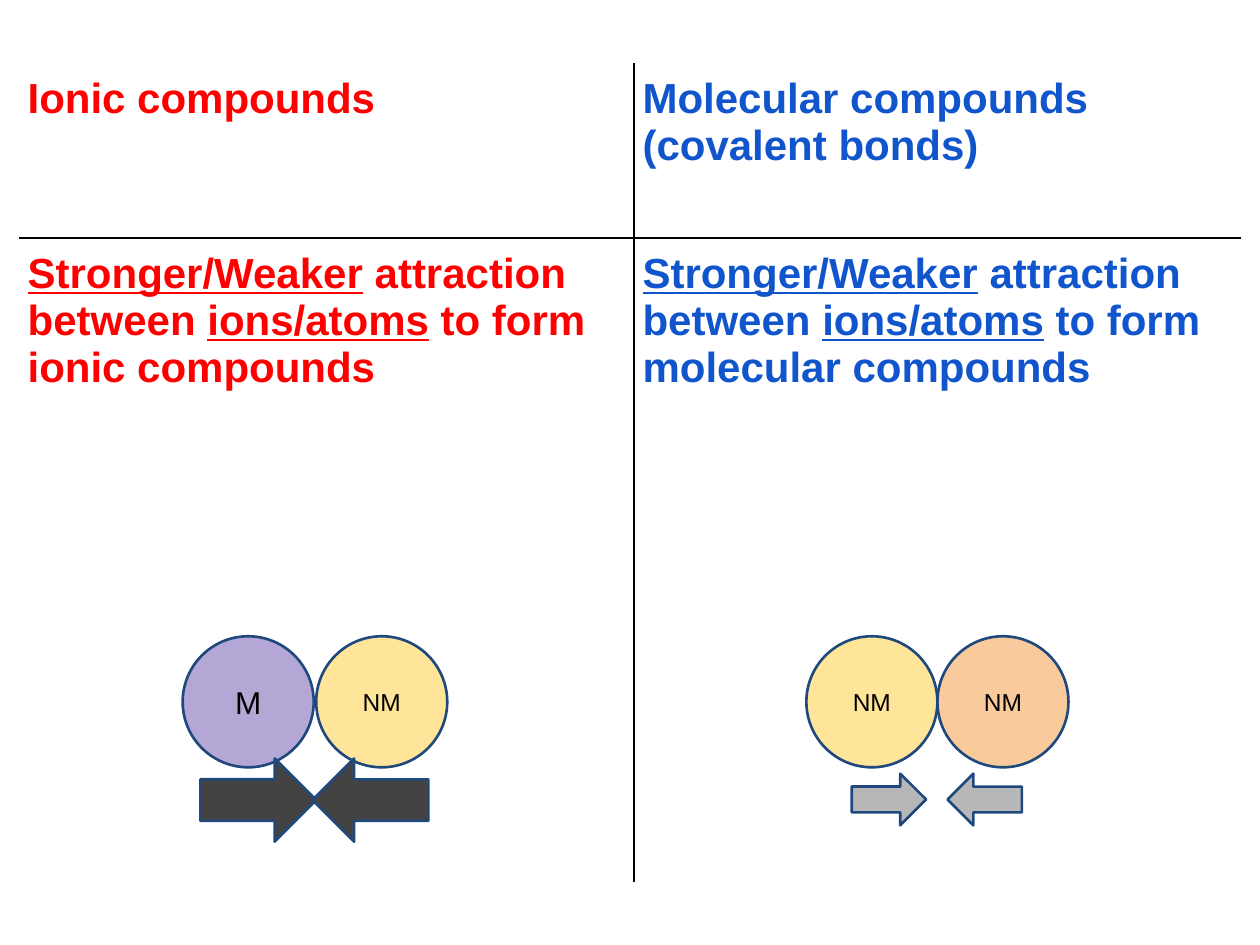
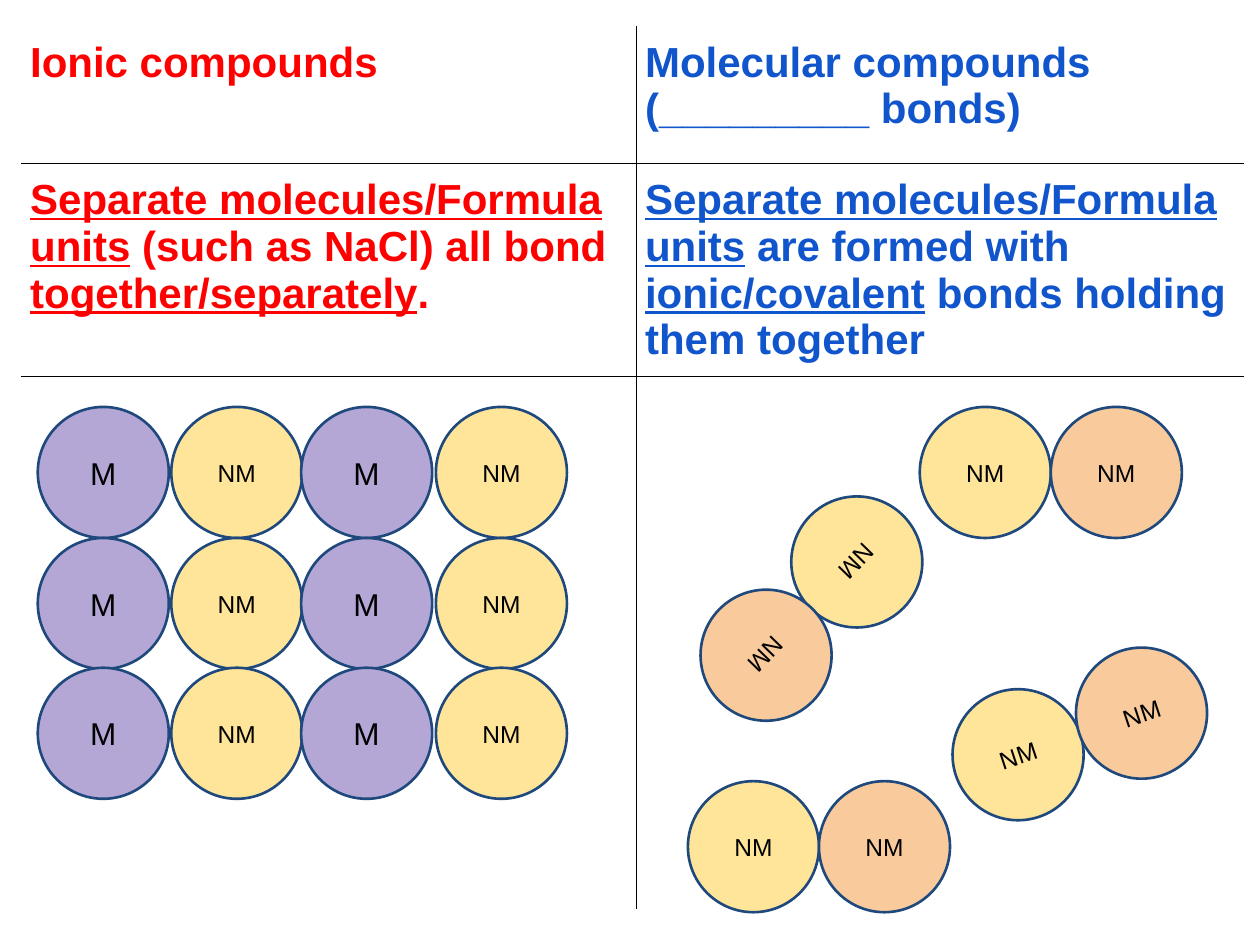
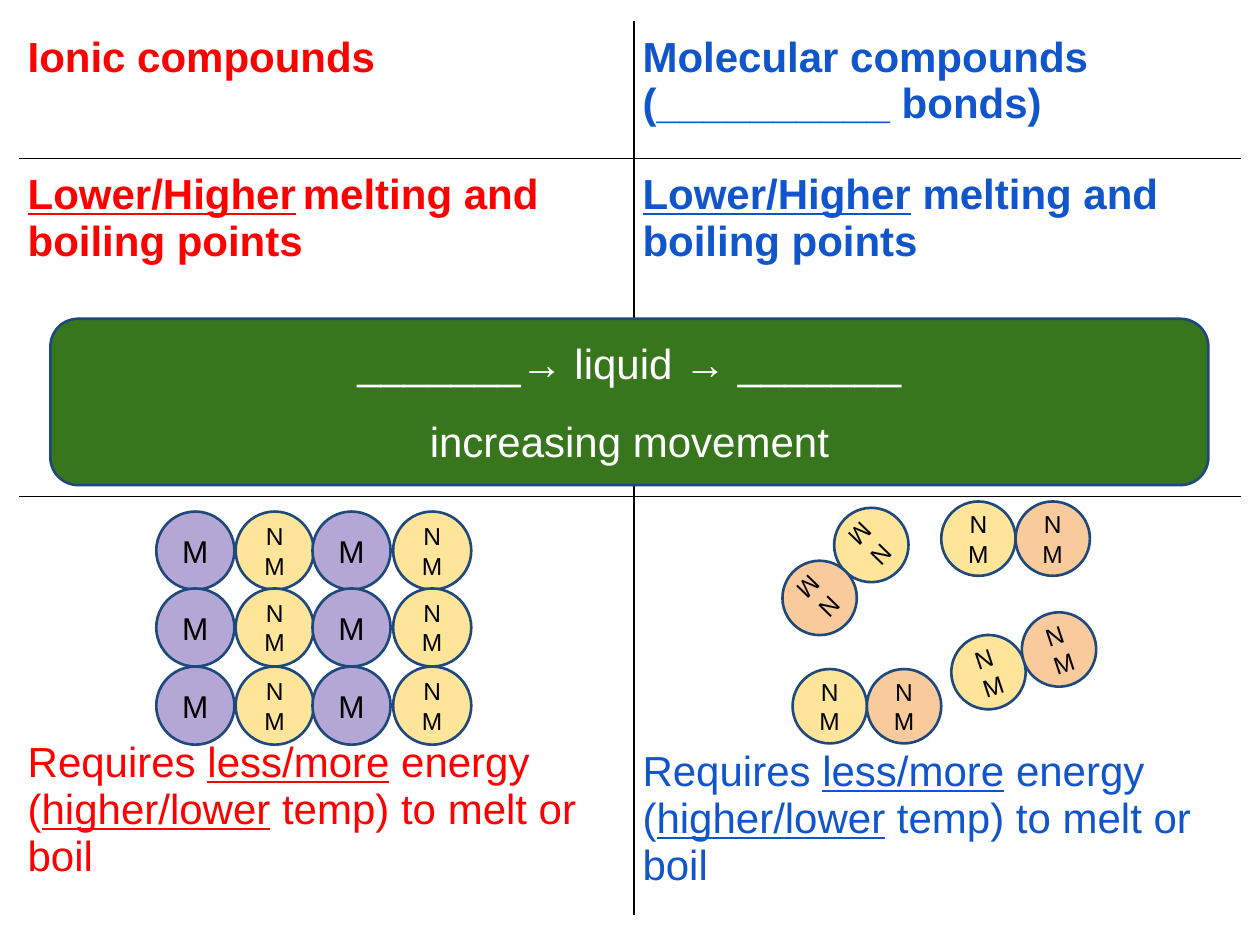
from dataclasses import dataclass
from typing import Optional

from lxml.etree import SubElement
from pptx import Presentation
from pptx.dml.color import RGBColor
from pptx.enum.shapes import MSO_SHAPE
from pptx.enum.text import MSO_ANCHOR, PP_ALIGN
from pptx.oxml.ns import qn
from pptx.util import Emu, Pt

EMU_PER_PX = 9144


@dataclass(frozen=True)
class Theme:
    font: str = "Arial"
    ionic: str = "FF0000"
    molecular: str = "1155CC"
    ink: str = "000000"
    white: str = "FFFFFF"
    outline: str = "1F497D"
    metal: str = "B4A7D6"
    nonmetal: str = "FFE599"
    partner: str = "F9CB9C"
    strong_pull: str = "434343"
    weak_pull: str = "B7B7B7"
    banner: str = "38761D"
    body_size: int = 24
    metal_size: int = 18
    small_size: int = 14
    outline_width: float = 1.5
    rule_width: int = 1


THEME = Theme()
COLUMN_COLORS = (THEME.ionic, THEME.molecular)
COLUMN_WIDTHS = (488, 482)
CELL_SIDE_MARGIN = 7
MARGIN = 10


@dataclass(frozen=True)
class Span:
    text: str
    underline: bool = False
    size: int = THEME.body_size
    color: Optional[str] = None
    bold: Optional[bool] = None


@dataclass(frozen=True)
class Entry:
    spans: tuple[Span, ...] = ()
    bold: bool = True
    top_margin: int = MARGIN


@dataclass(frozen=True)
class Comparison:
    left: int
    top: int
    row_heights: tuple[int, ...]
    rows: tuple[tuple[Entry, Entry], ...]


@dataclass(frozen=True)
class AtomKind:
    label: str
    fill: str
    size: int


@dataclass(frozen=True)
class Molecule:
    first: tuple[int, int]
    second: tuple[int, int]
    tilt: float = 0


@dataclass(frozen=True)
class Arrow:
    left: int
    top: int
    width: int
    height: int
    fill: str
    turn: int = 0


METAL = AtomKind("M", THEME.metal, THEME.metal_size)
NONMETAL = AtomKind("NM", THEME.nonmetal, THEME.small_size)
PARTNER = AtomKind("NM", THEME.partner, THEME.small_size)


def px(length: int) -> Emu:
    return Emu(length * EMU_PER_PX)


def rgb(color: str) -> RGBColor:
    return RGBColor.from_string(color)


def entry(*parts: str, **options) -> Entry:
    spans = tuple(
        Span(part.strip("*"), underline=part.startswith("*")) for part in parts
    )
    return Entry(spans, **options)


def add_span(paragraph, span: Span, color: str, bold: bool) -> None:
    run = paragraph.add_run()
    run.text = span.text
    font = run.font
    font.name = THEME.font
    font.size = Pt(span.size)
    font.bold = bold if span.bold is None else span.bold
    font.underline = span.underline
    font.color.rgb = rgb(span.color or color)


def set_borders(cell, ruled: dict[str, bool]) -> None:
    properties = cell._tc.get_or_add_tcPr()
    for side, visible in ruled.items():
        border = SubElement(
            properties, qn(f"a:ln{side}"), w=str(Pt(THEME.rule_width))
        )
        if visible:
            paint = SubElement(border, qn("a:solidFill"))
            SubElement(paint, qn("a:srgbClr"), val=THEME.ink)
        else:
            SubElement(border, qn("a:noFill"))


def draw_comparison(slide, comparison: Comparison) -> None:
    row_count = len(comparison.rows)
    table = slide.shapes.add_table(
        row_count,
        len(COLUMN_WIDTHS),
        px(comparison.left),
        px(comparison.top),
        px(sum(COLUMN_WIDTHS)),
        px(sum(comparison.row_heights)),
    ).table
    table.first_row = False
    table.horz_banding = False
    for column, width in zip(table.columns, COLUMN_WIDTHS):
        column.width = px(width)
    for row_index, entries in enumerate(comparison.rows):
        table.rows[row_index].height = px(comparison.row_heights[row_index])
        for column_index, content in enumerate(entries):
            cell = table.cell(row_index, column_index)
            cell.margin_left = cell.margin_right = px(CELL_SIDE_MARGIN)
            cell.margin_top = px(content.top_margin)
            cell.margin_bottom = px(MARGIN)
            set_borders(cell, {
                "L": column_index > 0,
                "R": column_index < len(COLUMN_WIDTHS) - 1,
                "T": row_index > 0,
                "B": row_index < row_count - 1,
            })
            cell.fill.background()
            paragraph = cell.text_frame.paragraphs[0]
            for span in content.spans:
                add_span(
                    paragraph, span, COLUMN_COLORS[column_index], content.bold
                )


def draw_outlined(
    slide, preset, left: int, top: int, width: int, height: int, fill: str,
    turn: float = 0,
):
    shape = slide.shapes.add_shape(
        preset, px(left), px(top), px(width), px(height)
    )
    shape.shadow.inherit = False
    shape.fill.solid()
    shape.fill.fore_color.rgb = rgb(fill)
    shape.line.color.rgb = rgb(THEME.outline)
    shape.line.width = Pt(THEME.outline_width)
    shape.rotation = turn
    return shape


def write_centered(shape, lines: tuple[Span, ...], color: str, gap: int = 0) -> None:
    frame = shape.text_frame
    frame.word_wrap = True
    frame.vertical_anchor = MSO_ANCHOR.MIDDLE
    frame.margin_left = frame.margin_right = px(MARGIN)
    frame.margin_top = frame.margin_bottom = px(MARGIN)
    for index, line in enumerate(lines):
        paragraph = frame.add_paragraph() if index else frame.paragraphs[0]
        paragraph.alignment = PP_ALIGN.CENTER
        if index:
            paragraph.space_before = Pt(gap)
        add_span(paragraph, line, color, False)


def draw_atom(
    slide, kind: AtomKind, left: int, top: int, diameter: int, tilt: float = 0
) -> None:
    atom = draw_outlined(
        slide, MSO_SHAPE.OVAL, left, top, diameter, diameter, kind.fill, tilt
    )
    write_centered(atom, (Span(kind.label, size=kind.size),), THEME.ink)


def draw_lattice(
    slide, lefts: tuple[int, ...], tops: tuple[int, ...], diameter: int
) -> None:
    for top in tops:
        for index, left in enumerate(lefts):
            draw_atom(slide, (METAL, NONMETAL)[index % 2], left, top, diameter)


def draw_molecules(
    slide, molecules: tuple[Molecule, ...], diameter: int
) -> None:
    for molecule in molecules:
        draw_atom(slide, NONMETAL, *molecule.first, diameter, molecule.tilt)
        draw_atom(slide, PARTNER, *molecule.second, diameter, molecule.tilt)


def headings(bond: str) -> tuple[Entry, Entry]:
    return (
        entry("Ionic compounds"),
        entry(f"Molecular compounds ({bond} bonds)"),
    )


def attraction(compound: str) -> Entry:
    return entry(
        "*Stronger/Weaker*", " attraction between ", "*ions/atoms*",
        f" to form {compound} compounds",
    )


def energy(top_margin: int) -> Entry:
    return entry(
        "Requires ", "*less/more*", " energy (", "*higher/lower*",
        " temp) to melt or boil", bold=False, top_margin=top_margin,
    )


def build_attraction(slide) -> None:
    draw_comparison(slide, Comparison(15, 50, (139, 511), (
        headings("covalent"),
        (attraction("ionic"), attraction("molecular")),
    )))
    draw_lattice(slide, (145, 251), (505,), 104)
    draw_molecules(slide, (Molecule((640, 505), (744, 505)),), 104)
    for arrow in (
        Arrow(159, 602, 92, 66, THEME.strong_pull),
        Arrow(248, 602, 92, 66, THEME.strong_pull, 180),
        Arrow(676, 614, 59, 41, THEME.weak_pull),
        Arrow(752, 614, 59, 41, THEME.weak_pull, 180),
    ):
        draw_outlined(
            slide, MSO_SHAPE.RIGHT_ARROW, arrow.left, arrow.top,
            arrow.width, arrow.height, arrow.fill, arrow.turn,
        )


def build_structure(slide) -> None:
    units = "*Separate molecules/Formula units*"
    draw_comparison(slide, Comparison(17, 21, (109, 152, 423), (
        headings("_" * 9),
        (
            entry(units, " (such as NaCl) all bond ",
                  "*together/separately*", "."),
            entry(units, " are formed with ", "*ionic/covalent*",
                  " bonds holding them together"),
        ),
        (Entry(), Entry()),
    )))
    draw_lattice(slide, (30, 136, 239, 346), (323, 427, 530), 104)
    draw_molecules(slide, (
        Molecule((730, 323), (834, 323)),
        Molecule((756, 547), (854, 514), 341.6),
        Molecule((546, 620), (650, 620)),
        Molecule((628, 394), (556, 468), 134.2),
    ), 104)


def build_melting(slide) -> None:
    choice = Span("Lower/Higher", underline=True)
    thin_space = Span(
        " ", size=THEME.small_size, color=THEME.ink, bold=False
    )
    draw_comparison(slide, Comparison(15, 17, (109, 268, 332), (
        headings("_" * 10),
        (
            Entry((choice, thin_space, Span("melting and boiling points"))),
            Entry((choice, Span(" melting and boiling points"))),
        ),
        (energy(193), energy(200)),
    )))
    draw_lattice(slide, (124, 187, 248, 312), (406, 467, 529), 62)
    draw_molecules(slide, (
        Molecule((747, 398), (806, 398)),
        Molecule((755, 504), (811, 486), 341.6),
        Molecule((629, 531), (688, 531)),
        Molecule((662, 403), (621, 445), 134.2),
    ), 59)
    banner = draw_outlined(
        slide, MSO_SHAPE.ROUNDED_RECTANGLE, 40, 253, 919, 132, THEME.banner
    )
    write_centered(
        banner,
        (Span("_______→ liquid → _______"), Span("increasing movement")),
        THEME.white,
        gap=16,
    )


def main() -> None:
    presentation = Presentation()
    presentation.slide_width = px(1000)
    presentation.slide_height = px(750)
    blank_layout = presentation.slide_layouts[6]
    for build in (build_attraction, build_structure, build_melting):
        build(presentation.slides.add_slide(blank_layout))
    presentation.save("out.pptx")


if __name__ == "__main__":
    main()
